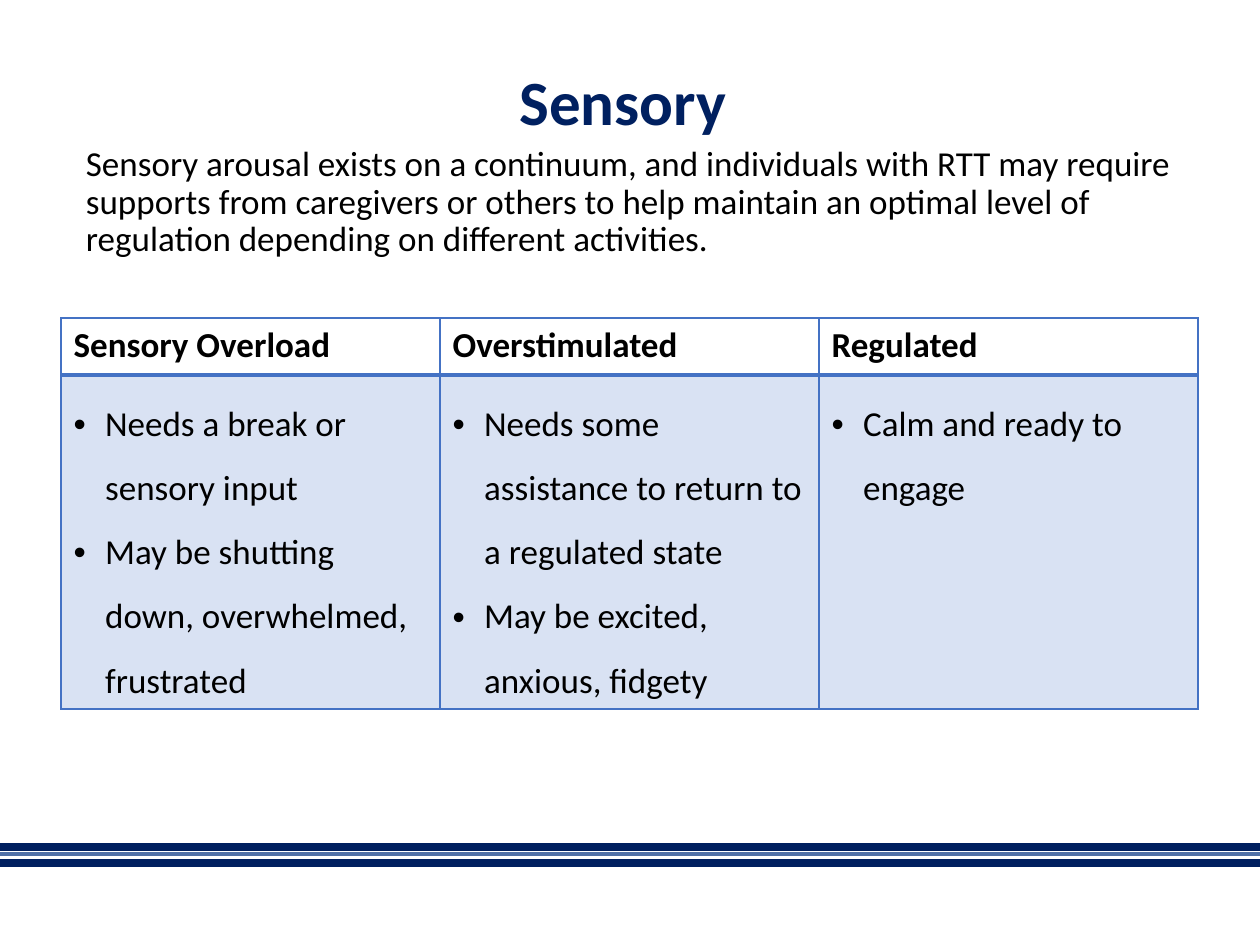
import lxml.etree
import pptx
import pptx.dml.color
import pptx.enum.shapes
import pptx.enum.text
import pptx.oxml
import pptx.oxml.ns
import pptx.util

PX = 914400 / 126
NAVY, BLUE, BLACK = "002060", "4472C4", "000000"
qn = pptx.oxml.ns.qn


def color(hex_code):
    return pptx.dml.color.RGBColor.from_string(hex_code)


def add_run(para, text, size, hex_code, bold=False):
    span = para.add_run()
    span.text = text
    span.font.name = "Calibri"
    span.font.size = pptx.util.Pt(size)
    span.font.bold = bold
    span.font.color.rgb = color(hex_code)


deck = pptx.Presentation()
deck.slide_width = round(1260 * PX)
deck.slide_height = round(945 * PX)
page = deck.slides.add_slide(deck.slide_layouts[6])

# Footer stripes
for y, hex_code, width in [(847, "001F5F", 4.5), (854, "5070A7", 2.25), (863, "001F5F", 4.5)]:
    stripe = page.shapes.add_connector(
        pptx.enum.shapes.MSO_CONNECTOR.STRAIGHT,
        0, round(y * PX), deck.slide_width, round(y * PX))
    stripe.line.color.rgb = color(hex_code)
    stripe.line.width = pptx.util.Pt(width)
    lxml.etree.SubElement(stripe._element.spPr, qn("a:effectLst"))

# Title
box = page.shapes.add_textbox(*(round(n * PX) for n in (87, 39, 1086, 132)))
box.text_frame.word_wrap = True
box.text_frame.vertical_anchor = pptx.enum.text.MSO_ANCHOR.MIDDLE
para = box.text_frame.paragraphs[0]
para.alignment = pptx.enum.text.PP_ALIGN.CENTER
para.line_spacing = 0.9
add_run(para, "Sensory ", 36, NAVY, bold=True)

# Introduction
box = page.shapes.add_textbox(*(round(n * PX) for n in (77, 141, 1134, 600)))
frame = box.text_frame
frame.word_wrap = True
frame.margin_left = frame.margin_right = round(9 * PX)
frame.margin_top = frame.margin_bottom = round(5 * PX)
para = frame.paragraphs[0]
para.line_spacing = 0.9
add_run(para, "Sensory arousal exists on a continuum, and individuals with RTT may require "
        "supports from caregivers or others to help maintain an optimal level of "
        "regulation depending on different activities.", 20, BLACK)

# Table of arousal states
states = [
    ("Sensory Overload", ["Needs a break or sensory input",
                          "May be shutting down, overwhelmed, frustrated"]),
    ("Overstimulated", ["Needs some assistance to return to a regulated state",
                        "May be excited, anxious, fidgety"]),
    ("Regulated", ["Calm and ready to engage"]),
]
table = page.shapes.add_table(
    2, len(states), *(round(n * PX) for n in (61, 318, 1137, 391))).table
table.rows[0].height = round(57 * PX)
table.rows[1].height = round(334 * PX)

for column, (heading, notes) in enumerate(states):
    table.columns[column].width = round(379 * PX)
    header, body = table.cell(0, column), table.cell(1, column)

    header.fill.background()
    add_run(header.text_frame.paragraphs[0], heading, 20, BLACK, bold=True)

    body.fill.solid()
    body.fill.fore_color.rgb = color(BLUE)
    tint = body._tc.tcPr.find(".//" + qn("a:srgbClr"))
    lxml.etree.SubElement(tint, qn("a:alpha"), val="20000")
    for index, note in enumerate(notes):
        frame = body.text_frame
        para = frame.add_paragraph() if index else frame.paragraphs[0]
        para.line_spacing = 1.5
        properties = para._p.get_or_add_pPr()
        properties.set("marL", "228600")
        properties.set("indent", "-228600")
        lxml.etree.SubElement(properties, qn("a:buFont"), typeface="Arial")
        lxml.etree.SubElement(properties, qn("a:buChar"), char="•")
        add_run(para, note, 20, BLACK)

    # The rule between the two rows is twice as heavy as the other borders
    for cell, heavy_side in [(header, "lnB"), (body, "lnT")]:
        for position, side in enumerate(["lnL", "lnR", "lnT", "lnB"]):
            width = pptx.util.Pt(2 if side == heavy_side else 1)
            border = pptx.oxml.parse_xml(
                f'<a:{side} {pptx.oxml.ns.nsdecls("a")} w="{width}"><a:solidFill>'
                f'<a:srgbClr val="{BLUE}"/></a:solidFill></a:{side}>')
            cell._tc.tcPr.insert(position, border)

deck.save("out.pptx")
